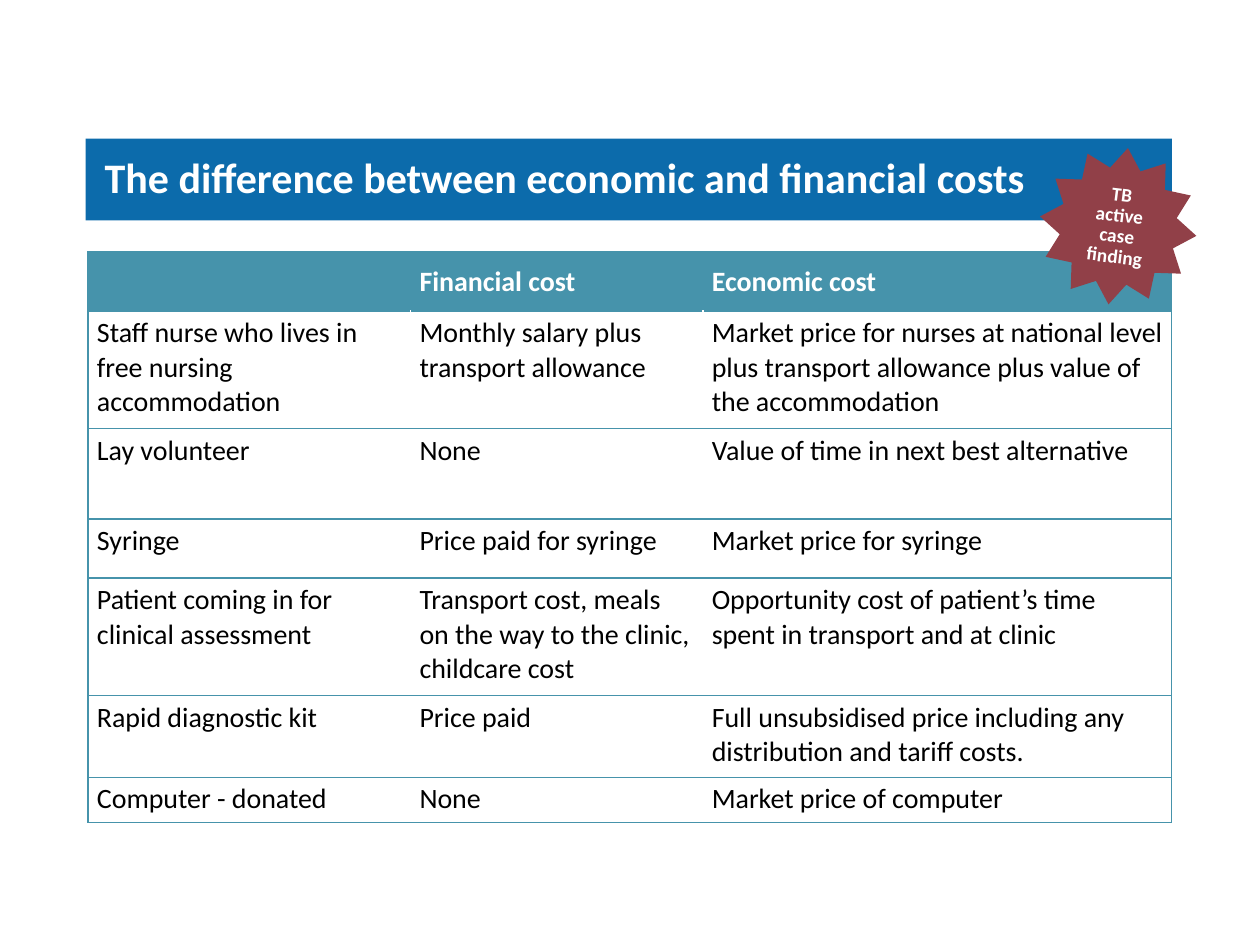
from lxml.etree import SubElement
from pptx import Presentation
from pptx.dml.color import RGBColor
from pptx.enum.shapes import MSO_SHAPE as Shape
from pptx.enum.text import MSO_ANCHOR as Anchor, MSO_AUTO_SIZE as AutoSize, PP_ALIGN as Align
from pptx.oxml.ns import qn
from pptx.util import Inches, Pt

HEADING = "The difference between economic and financial costs"
BADGE = "TB active case finding"
COSTS = [
    ("", "Financial cost", "Economic cost"),
    ("Staff nurse who lives in free nursing accommodation",
     "Monthly salary plus transport allowance",
     "Market price for nurses at national level plus transport allowance plus value of the accommodation"),
    ("Lay volunteer", "None", "Value of time in next best alternative"),
    ("Syringe", "Price paid for syringe", "Market price for syringe"),
    ("Patient coming in for clinical assessment",
     "Transport cost, meals on the way to the clinic, childcare cost",
     "Opportunity cost of patient’s time spent in transport and at clinic"),
    ("Rapid diagnostic kit", "Price paid",
     "Full unsubsidised price including any distribution and tariff costs."),
    ("Computer - donated", "None", "Market price of computer"),
]
COLUMN_WIDTHS = [2.56, 2.32, 3.72]
ROW_HEIGHTS = [0.47, 0.93, 0.72, 0.47, 0.93, 0.65, 0.36]
COLORS = {"banner": "0C6BAB", "teal": "4693AB", "badge": "914048",
          "white": "FFFFFF", "black": "000000"}


def color(name):
    return RGBColor.from_string(COLORS[name])


def apply(target, values):
    for key, value in values.items():
        setattr(target, key, value)


def format_text(paragraph, size, ink, bold, **layout):
    apply(paragraph, layout)
    for run in paragraph.runs:
        apply(run.font, {"name": "Calibri", "size": Pt(size), "bold": bold})
        run.font.color.rgb = color(ink)


def fill_solid(part, name):
    part.fill.solid()
    part.fill.fore_color.rgb = color(name)


def add_borders(cell, sides):
    properties = cell._tc.get_or_add_tcPr()
    for side, name in sides.items():
        line = SubElement(properties, qn(f"a:ln{side}"), w=str(Pt(1)))
        SubElement(SubElement(line, qn("a:solidFill")), qn("a:srgbClr"), val=COLORS[name])


def place(*lengths):
    return dict(zip(("left", "top", "width", "height"), map(Inches, lengths)))


def add_heading(slide):
    heading = slide.shapes.title
    apply(heading, place(0.68, 1.1, 8.62, 0.65))
    fill_solid(heading, "banner")
    frame = heading.text_frame
    frame.text = HEADING
    apply(frame, {"margin_left": Inches(0.15), "margin_right": Inches(0.1),
                  "margin_top": Inches(0.1), "margin_bottom": Inches(0.1),
                  "vertical_anchor": Anchor.MIDDLE, "word_wrap": True,
                  "auto_size": AutoSize.NONE})
    format_text(frame.paragraphs[0], 24, "white", True,
                alignment=Align.LEFT, line_spacing=0.9)


def add_costs(slide):
    area = place(0.7, 2, sum(COLUMN_WIDTHS), sum(ROW_HEIGHTS))
    table = slide.shapes.add_table(len(COSTS), len(COLUMN_WIDTHS), **area).table
    table.horz_banding = False
    for column, width in zip(table.columns, COLUMN_WIDTHS):
        column.width = Inches(width)
    for row, height in zip(table.rows, ROW_HEIGHTS):
        row.height = Inches(height)
    last = len(COLUMN_WIDTHS) - 1
    for r, entries in enumerate(COSTS):
        header = r == 0
        for c, entry in enumerate(entries):
            cell = table.cell(r, c)
            cell.text = entry
            apply(cell, {"margin_left": Inches(0.07), "margin_right": Inches(0.07),
                         "margin_top": Inches(0.04), "margin_bottom": Inches(0.04),
                         "vertical_anchor": Anchor.MIDDLE if header else Anchor.TOP})
            add_borders(cell, {"L": "teal" if header or c == 0 else "white",
                               "R": "teal" if header or c == last else "white",
                               "T": "teal", "B": "teal"})
            if header:
                fill_solid(cell, "teal")
            else:
                cell.fill.background()
            format_text(cell.text_frame.paragraphs[0], 16,
                        "white" if header else "black", header)


def add_badge(slide):
    badge = slide.shapes.add_shape(Shape.STAR_12_POINT, **place(8.25, 1.17, 1.25, 1.25))
    badge.rotation = 7.1
    badge.shadow.inherit = False
    fill_solid(badge, "badge")
    badge.line.fill.background()
    frame = badge.text_frame
    frame.text = BADGE
    apply(frame, {"word_wrap": True, "vertical_anchor": Anchor.MIDDLE})
    format_text(frame.paragraphs[0], 11, "white", True,
                alignment=Align.CENTER, line_spacing=0.9)


def main():
    deck = Presentation()
    apply(deck, {"slide_width": Inches(10), "slide_height": Inches(7.5)})
    slide = deck.slides.add_slide(deck.slide_layouts.get_by_name("Title Only"))
    add_heading(slide)
    add_costs(slide)
    add_badge(slide)
    deck.save("out.pptx")


if __name__ == "__main__":
    main()
